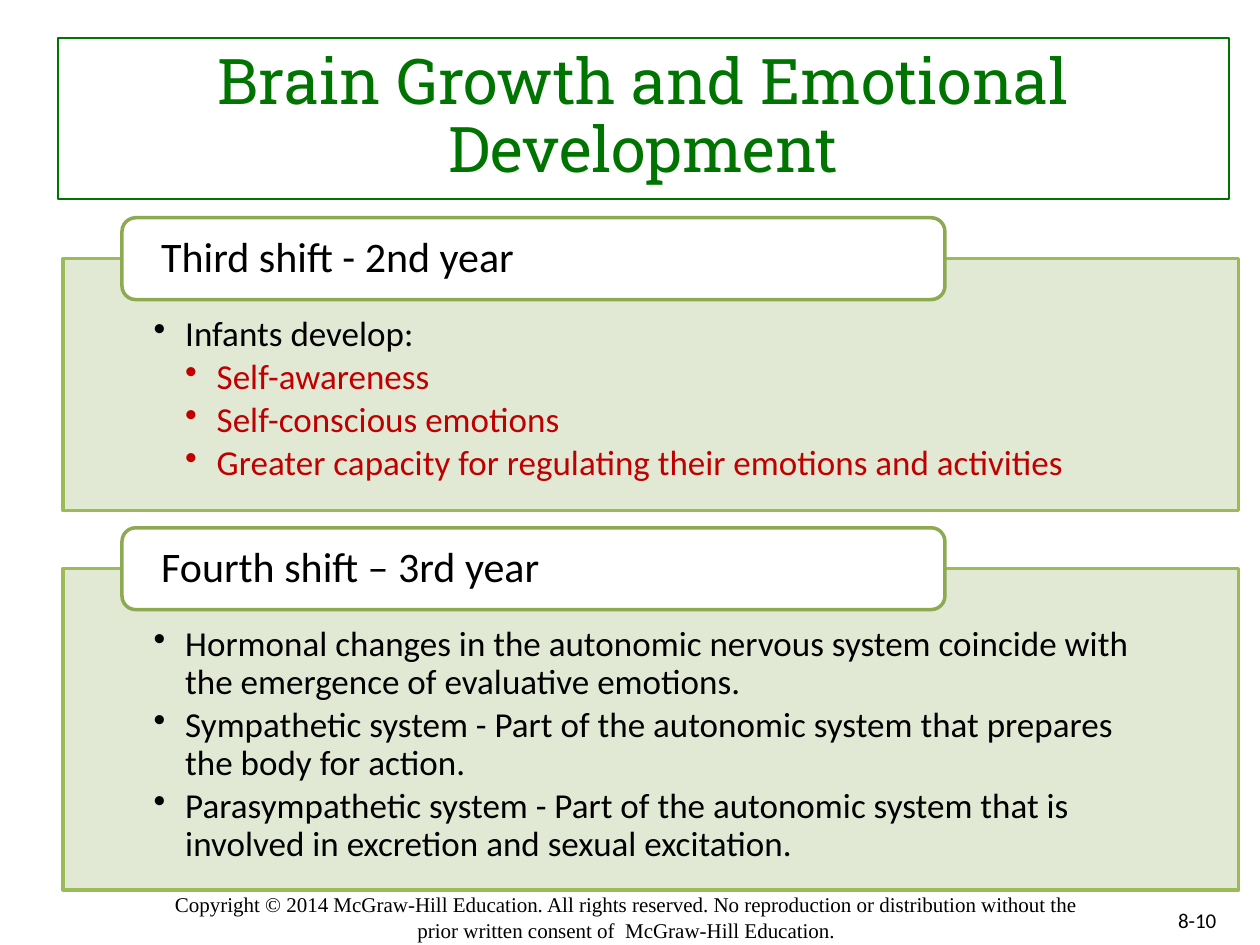
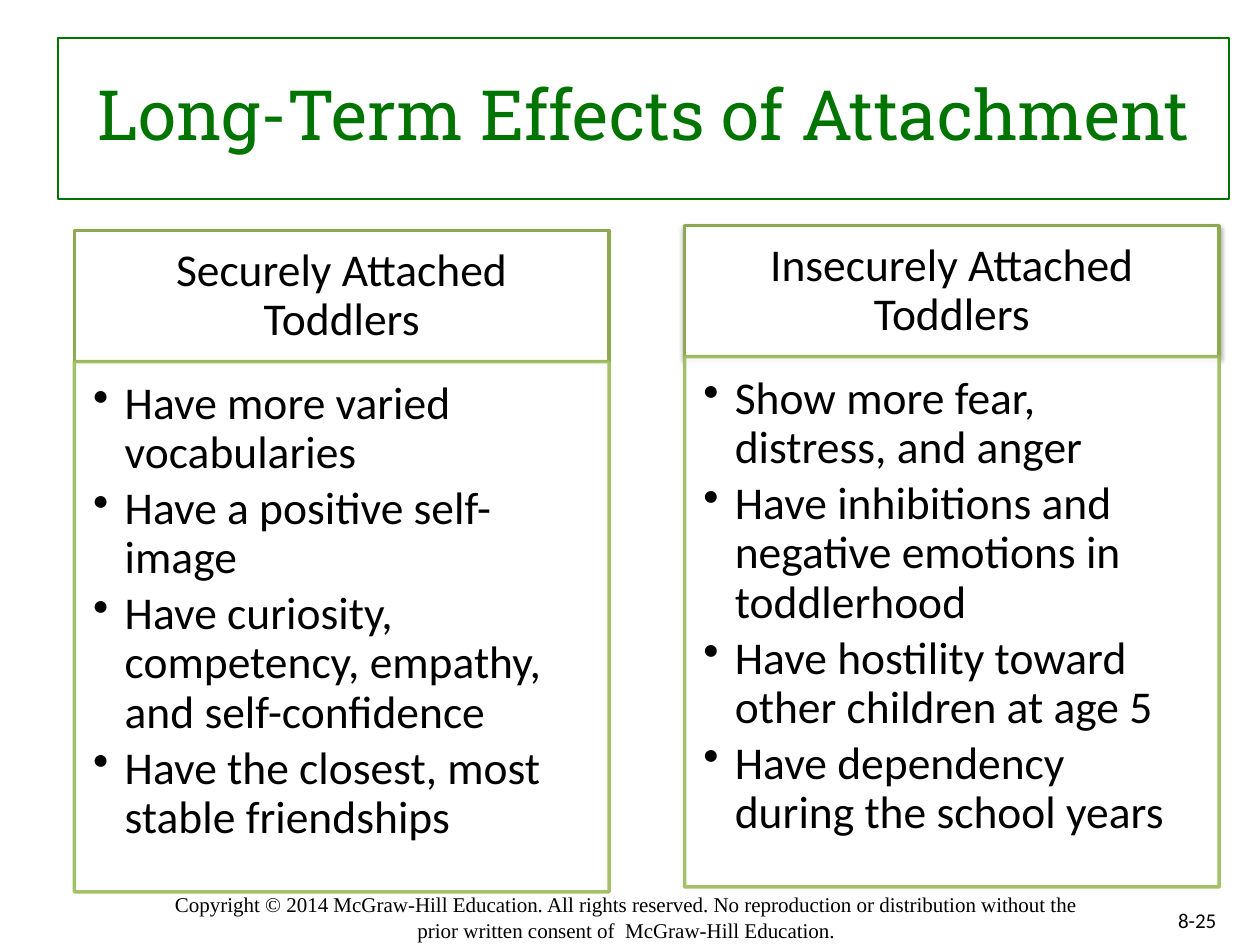
from dataclasses import dataclass

from lxml.etree import SubElement
from pptx import Presentation
from pptx.dml.color import RGBColor
from pptx.enum.shapes import MSO_SHAPE as Preset
from pptx.enum.text import MSO_ANCHOR as Anchor, MSO_AUTO_SIZE as AutoSize, PP_ALIGN as Align
from pptx.oxml.ns import qn
from pptx.util import Cm, Pt


@dataclass(frozen=True)
class Theme:
    title_green: str = "007400"
    header_line: str = "8DAA51"
    body_line: str = "9BBB59"
    card_fill: str = "DEE7D1"
    white: str = "FFFFFF"
    black: str = "000000"
    red: str = "C00000"
    title_font: str = "Roboto Slab"
    text_font: str = "Calibri"
    footer_font: str = "Times New Roman"
    small: float = 12
    card_text: float = 20
    card_header: float = 24
    column_text: float = 26


theme = Theme()


def add_panel(page, preset, place, fill, line, margins, opacity=100, line_opacity=100):
    """Add an outlined panel; place and margins are in centimetres."""
    box = page.shapes.add_shape(preset, *(Cm(length) for length in place))
    box.shadow.inherit = False
    box.fill.solid()
    box.fill.fore_color.rgb = RGBColor.from_string(fill)
    box.line.color.rgb = RGBColor.from_string(line)
    box.line.width = Pt(2)
    properties = box._element.spPr
    for parent, percent in ((properties, opacity), (properties.find(qn("a:ln")), line_opacity)):
        if percent < 100:
            color = parent.find(qn("a:solidFill")).find(qn("a:srgbClr"))
            SubElement(color, qn("a:alpha"), val=str(percent * 1000))
    frame = box.text_frame
    frame.word_wrap = True
    frame.margin_left, frame.margin_top, frame.margin_right, frame.margin_bottom = (
        Cm(length) for length in margins)
    return box


def write_text(frame, lines, size, anchor=Anchor.TOP, align=Align.LEFT, font=theme.text_font,
               spacing=0.9, after=0.0):
    """Write (text, bullet level, colour) lines; level 0 has no bullet."""
    frame.vertical_anchor = anchor
    for index, (text, level, color) in enumerate(lines):
        para = frame.paragraphs[0] if index == 0 else frame.add_paragraph()
        para.text = text
        para.alignment = align
        para.line_spacing = spacing
        para.space_after = Pt(size * after)
        if level:
            para.level = level
            properties = para._p.get_or_add_pPr()
            properties.set("marL", str(Cm(0.635 * level)))
            properties.set("indent", str(-Cm(0.635)))
            SubElement(properties, qn("a:buChar"), char="•")
        para.font.name = font
        para.font.size = Pt(size)
        para.font.color.rgb = RGBColor.from_string(color)


deck = Presentation()
deck.slide_width, deck.slide_height = Cm(25.4), Cm(19.05)

# Shared frame: title box, copyright line and page number
copyright_line = ("Copyright © 2014 McGraw-Hill Education. All rights reserved. "
                  "No reproduction or distribution without the prior written consent of  "
                  "McGraw-Hill Education.")
headings = [
    ("Brain Growth and Emotional Development", 36, "8-10"),
    ("Long-Term Effects of Attachment", 39.6, "8-25"),
]
pages = []
for heading, heading_size, number in headings:
    page = deck.slides.add_slide(deck.slide_layouts[5])
    pages.append(page)

    title = page.shapes.title
    title.left, title.top, title.width, title.height = Cm(1.17), Cm(0.76), Cm(23.6), Cm(3.25)
    title.line.color.rgb = RGBColor.from_string(theme.title_green)
    title.line.width = Pt(1.25)
    title.text_frame.auto_size = AutoSize.NONE
    write_text(title.text_frame, [(heading, 0, theme.title_green)], heading_size,
               Anchor.MIDDLE, Align.CENTER, theme.title_font)

    footer = page.shapes.add_textbox(Cm(3.23), Cm(17.98), Cm(18.8), Cm(1.02)).text_frame
    footer.word_wrap = True
    footer.margin_left = footer.margin_top = footer.margin_right = footer.margin_bottom = 0
    write_text(footer, [(copyright_line, 0, theme.black)], theme.small,
               align=Align.CENTER, font=theme.footer_font, spacing=1.0)

    page_number = page.shapes.add_textbox(Cm(18.85), Cm(18.03), Cm(5.92), Cm(1.02)).text_frame
    page_number.word_wrap = True
    write_text(page_number, [(number, 0, theme.black)], theme.small,
               Anchor.MIDDLE, Align.RIGHT, spacing=1.0)

growth_page, attachment_page = pages

# Stacked cards, each with a rounded header over its top edge
cards = [
    ("Third shift - 2nd year", 5.08, [
        ("Infants develop:", 1, theme.black),
        ("Self-awareness", 2, theme.red),
        ("Self-conscious emotions", 2, theme.red),
        ("Greater capacity for regulating their emotions and activities", 2, theme.red),
    ]),
    ("Fourth shift – 3rd year", 6.48, [
        ("Hormonal changes in the autonomic nervous system coincide with the emergence "
         "of evaluative emotions.", 1, theme.black),
        ("Sympathetic system - Part of the autonomic system that prepares the body "
         "for action.", 1, theme.black),
        ("Parasympathetic system - Part of the autonomic system that is involved in "
         "excretion and sexual excitation.", 1, theme.black),
    ]),
]
card_top, card_gap = 5.21, 1.17
for header, card_height, lines in cards:
    card = add_panel(growth_page, Preset.RECTANGLE, (1.27, card_top, 23.7, card_height),
                     theme.card_fill, theme.body_line, (1.83, 1.17, 1.83, 0.41), opacity=90)
    write_text(card.text_frame, lines, theme.card_text, after=0.15)
    tab = add_panel(growth_page, Preset.ROUNDED_RECTANGLE, (2.46, card_top - 0.82, 16.59, 1.65),
                    theme.white, theme.header_line, (0.71, 0.08, 0.71, 0.08))
    write_text(tab.text_frame, [(header, 0, theme.black)], theme.card_header, Anchor.MIDDLE)
    card_top += card_height + card_gap

# Two columns comparing the toddlers; the second header casts a shadow
columns = [
    ("Securely Attached Toddlers", 4.65, False, [
        "Have more varied vocabularies",
        "Have a positive self-image",
        "Have curiosity, competency, empathy, and self-confidence",
        "Have the closest, most stable friendships",
    ]),
    ("Insecurely Attached Toddlers", 4.55, True, [
        "Show more fear, distress, and anger",
        "Have inhibitions and negative emotions in toddlerhood",
        "Have hostility toward other children at age 5",
        "Have dependency during the school years",
    ]),
]
column_width, column_step, header_height = 10.78, 12.3, 2.64
for index, (header, top, has_shadow, lines) in enumerate(columns):
    left = 1.5 + index * column_step
    header_box = add_panel(attachment_page, Preset.RECTANGLE,
                           (left, top, column_width, header_height),
                           theme.white, theme.header_line, (0.51, 0.3, 0.51, 0.3))
    write_text(header_box.text_frame, [(header, 0, theme.black)], theme.column_text,
               Anchor.MIDDLE, Align.CENTER)
    if has_shadow:
        effects = header_box._element.spPr.find(qn("a:effectLst"))
        shadow = SubElement(effects, qn("a:outerShdw"), blurRad=str(Pt(3.1)),
                            dist=str(Pt(1.6)), dir="5400000", rotWithShape="0")
        shadow_color = SubElement(shadow, qn("a:srgbClr"), val=theme.black)
        SubElement(shadow_color, qn("a:alpha"), val="38000")
    body = add_panel(attachment_page, Preset.RECTANGLE,
                     (left, top + header_height, column_width, 10.69),
                     theme.white, theme.body_line, (0.38, 0.38, 0.51, 0.58),
                     opacity=90, line_opacity=90)
    write_text(body.text_frame, [(line, 1, theme.black) for line in lines],
               theme.column_text, after=0.15)

deck.save("out.pptx")
